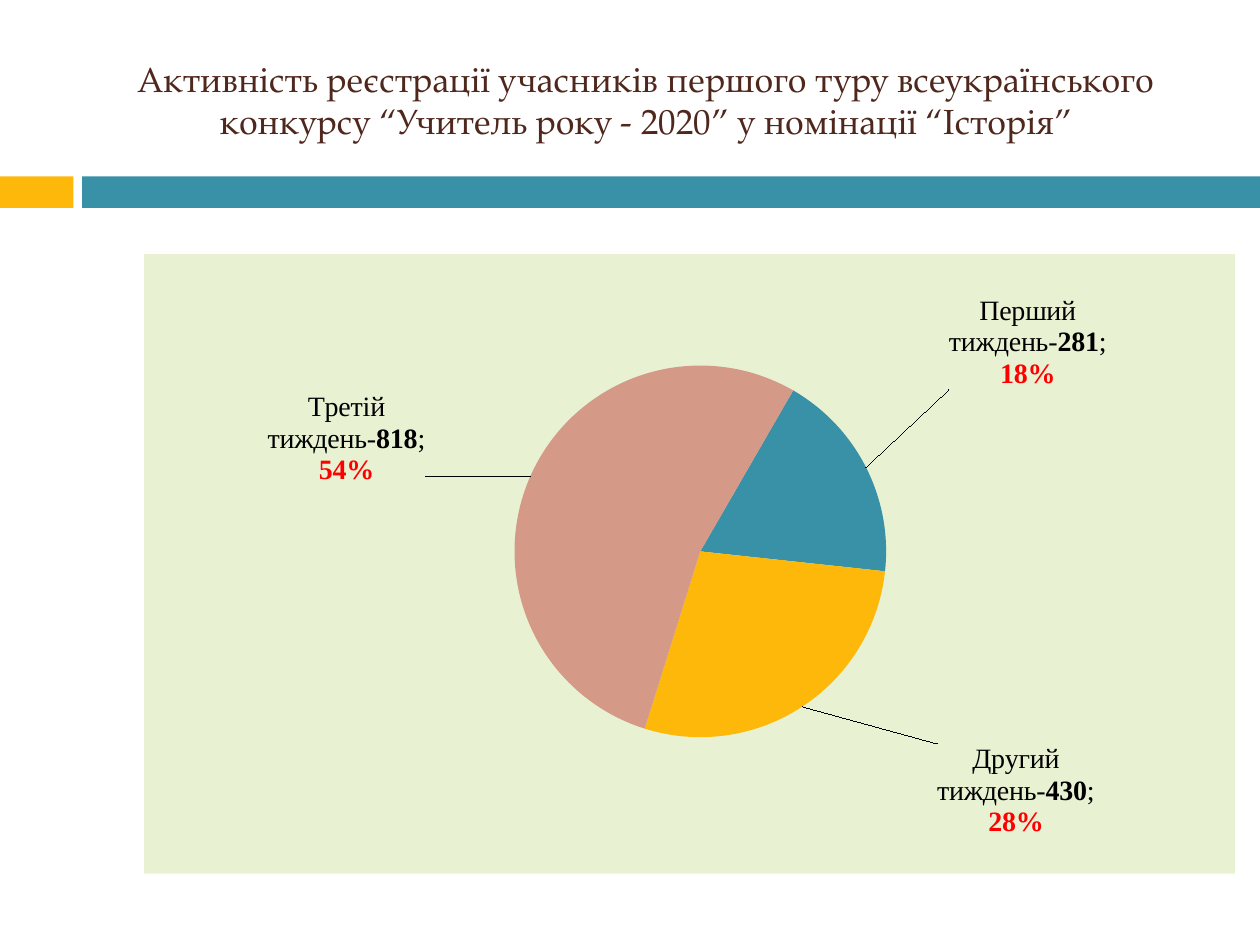
from dataclasses import dataclass

from lxml import etree
from pptx import Presentation
from pptx.chart.data import CategoryChartData
from pptx.dml.color import RGBColor
from pptx.enum.chart import XL_CHART_TYPE as ChartType, XL_LABEL_POSITION as LabelPosition
from pptx.enum.shapes import MSO_SHAPE as Shape
from pptx.enum.text import MSO_ANCHOR as Anchor, PP_ALIGN as Align
from pptx.oxml import parse_xml
from pptx.oxml.ns import qn
from pptx.util import Pt

CHART_NS = "http://schemas.openxmlformats.org/drawingml/2006/chart"
DRAW_NS = "http://schemas.openxmlformats.org/drawingml/2006/main"


@dataclass(frozen=True)
class Theme:
    teal: str = "3891A7"
    amber: str = "FEB80A"
    rose: str = "D59988"
    panel: str = "E8F2D3"
    title: str = "4F271C"
    text: str = "000000"
    accent: str = "FF0000"
    title_font: str = "TeX Gyre Pagella"
    label_font: str = "Times New Roman"
    chart_font: str = "Calibri"
    title_size: int = 20
    label_size: int = 16
    chart_size: int = 10


THEME = Theme()

# Week, registrations, share, slice colour, label shift as a share of the chart
WEEKS = [
    ("Перший тиждень", 281, "18%", THEME.teal, (0.07, -0.12)),
    ("Другий тиждень", 430, "28%", THEME.amber, (0.12, 0.05)),
    ("Третій тиждень", 818, "54%", THEME.rose, (-0.09, 0.02)),
]


def style(font, name, size, color, bold=False):
    font.name, font.size, font.bold = name, Pt(size), bold
    font.color.rgb = RGBColor.from_string(color)


def add_span(para, text, name, size, color, bold=False):
    span = para.add_run()
    span.text = text
    style(span.font, name, size, color, bold)


def manual_layout(x, y, width=None, height=None):
    """Chart layout: a full box for the plot, or a shift for a label."""
    layout = etree.Element(qn("c:layout"), nsmap={"c": CHART_NS})
    manual = etree.SubElement(layout, qn("c:manualLayout"))
    values = {"x": x, "y": y}
    if width is not None:
        values = {"layoutTarget": "inner", "xMode": "edge", "yMode": "edge",
                  **values, "w": width, "h": height}
    for tag, value in values.items():
        etree.SubElement(manual, qn(f"c:{tag}")).set("val", str(value))
    return parse_xml(etree.tostring(layout))


def add_title(page, left, top, width, height):
    box = page.shapes.title
    box.left, box.top, box.width, box.height = map(Pt, (left, top, width, height))
    frame = box.text_frame
    frame.word_wrap = True
    frame.vertical_anchor = Anchor.MIDDLE
    para = frame.paragraphs[0]
    para.alignment = Align.CENTER
    add_span(para, "Активність реєстрації учасників першого туру всеукраїнського "
                   "конкурсу “Учитель року - 2020” у номінації “Історія”",
             THEME.title_font, THEME.title_size, THEME.title)


def add_band(page, left, top, width, height):
    """Short amber block, a gap, then a teal bar to the right edge."""
    block, gap = 42, 5
    bar_left = block + gap
    for start, length, color in ((0, block, THEME.amber),
                                 (bar_left, width - bar_left, THEME.teal)):
        bar = page.shapes.add_shape(Shape.RECTANGLE, Pt(left + start), Pt(top),
                                    Pt(length), Pt(height))
        bar.shadow.inherit = False
        bar.fill.solid()
        bar.fill.fore_color.rgb = RGBColor.from_string(color)
        bar.line.fill.background()


def add_week_label(point, week, value, share, shift):
    label = point.data_label
    para = label.text_frame.paragraphs[0]
    for text, color, bold in ((f"{week}-", THEME.text, False),
                              (str(value), THEME.text, True),
                              ("; ", THEME.text, False),
                              (share, THEME.accent, True)):
        add_span(para, text, THEME.label_font, THEME.label_size, color, bold)
    label.position = LabelPosition.OUTSIDE_END


def add_registration_pie(page, left, top, width, height):
    data = CategoryChartData()
    data.categories = [week[0] for week in WEEKS]
    data.add_series("Series 1", [week[1] for week in WEEKS])
    chart = page.shapes.add_chart(ChartType.PIE, Pt(left), Pt(top), Pt(width),
                                  Pt(height), data).chart
    chart.has_legend = chart.has_title = False
    style(chart.font, THEME.chart_font, THEME.chart_size, THEME.text)

    # Slices and their shifted labels
    plot = chart.plots[0]
    plot.vary_by_categories = True
    series = plot.series[0]
    labels = series.data_labels
    labels.show_category_name = labels.show_value = labels.show_percentage = True
    labels.position = LabelPosition.OUTSIDE_END
    style(labels.font, THEME.label_font, THEME.label_size, THEME.text)
    labels._element.find(qn("c:showLeaderLines")).set("val", "1")
    for index, (week, value, share, color, shift) in enumerate(WEEKS):
        point = series.points[index]
        point.format.fill.solid()
        point.format.fill.fore_color.rgb = RGBColor.from_string(color)
        add_week_label(point, week, value, share, shift)
    for entry, week in zip(labels._element.findall(qn("c:dLbl")), WEEKS):
        entry.find(qn("c:idx")).addnext(manual_layout(*week[4]))

    # Rotation and place of the pie
    pie = plot._element
    angle = pie.find(qn("c:firstSliceAng"))
    if angle is None:
        angle = etree.SubElement(pie, qn("c:firstSliceAng"))
    angle.set("val", "30")
    area = pie.getparent()
    for old in area.findall(qn("c:layout")):
        area.remove(old)
    area.insert(0, manual_layout(0.2, 0.18, 0.62, 0.6))

    # Green panel behind the pie
    panel = parse_xml(
        f'<c:spPr xmlns:c="{CHART_NS}" xmlns:a="{DRAW_NS}"><a:solidFill>'
        f'<a:srgbClr val="{THEME.panel}"/></a:solidFill>'
        "<a:ln><a:noFill/></a:ln></c:spPr>")
    chart._chartSpace.find(qn("c:chart")).addnext(panel)


def main():
    deck = Presentation()
    deck.slide_width, deck.slide_height = Pt(720), Pt(540)
    page = deck.slides.add_slide(deck.slide_layouts[5])
    add_band(page, 0, 100.8, 720, 18)
    add_title(page, 48, 18, 642, 78)
    add_registration_pie(page, 82.3, 145.2, 623.4, 354)
    deck.save("out.pptx")


if __name__ == "__main__":
    main()
